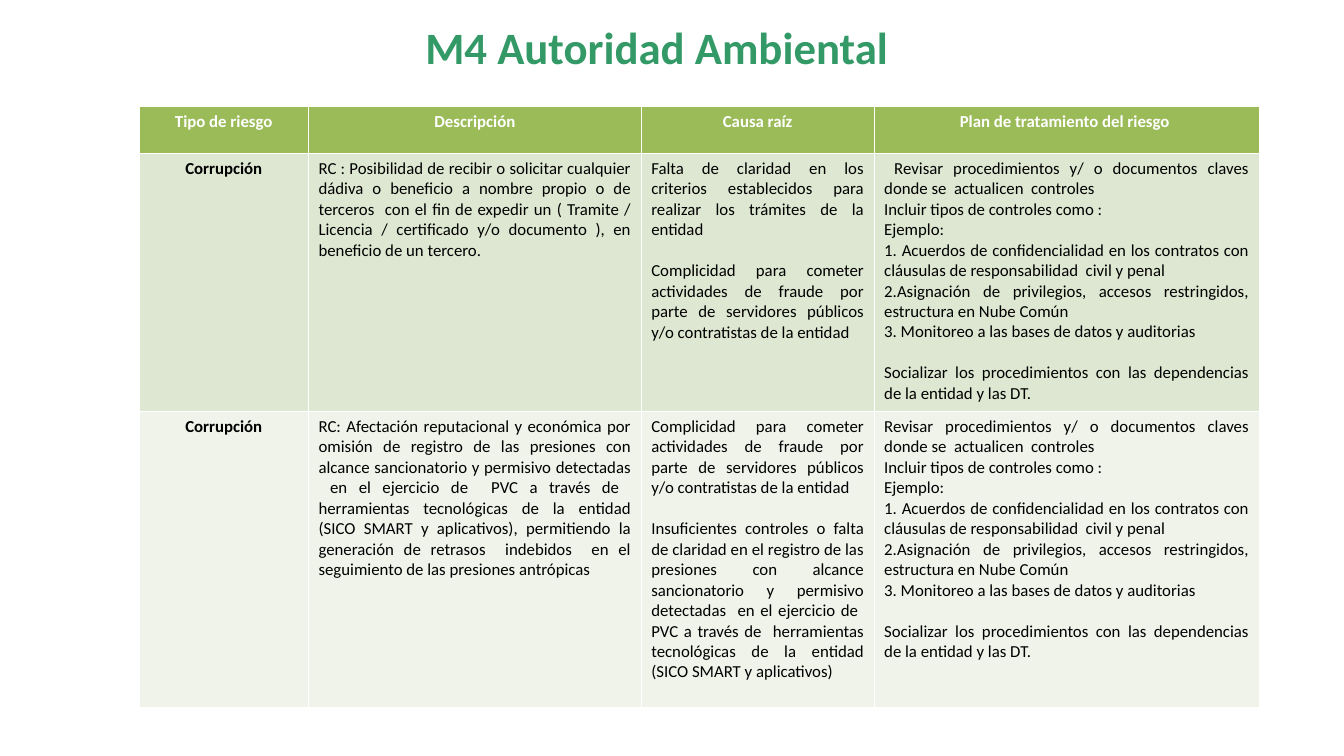
import pptx
import pptx.util
import pptx.dml.color
import pptx.enum.text
from pptx.util import Inches

COLORS = {
    "title": "339966",
    "head": "9BBB59",
    "dark": "DEE7D1",
    "light": "EFF3EA",
    "white": "FFFFFF",
    "black": "000000",
}
ALIGN = pptx.enum.text.PP_ALIGN
GAP = 14.65  # height of one 12 pt line


def rgb(name):
    return pptx.dml.color.RGBColor.from_string(COLORS[name])


def write(frame, blocks, size=12, color="black", bold=False, align=ALIGN.JUSTIFY):
    """Fill a frame with blocks of lines, one blank line's height between blocks."""
    para = None
    for block in blocks:
        for i, line in enumerate(block):
            first = para is None
            para = frame.paragraphs[0] if first else frame.add_paragraph()
            para.alignment = align
            if i == 0 and not first:
                para.space_before = pptx.util.Pt(GAP)
            run = para.add_run()
            run.text = line
            run.font.name = "Calibri"
            run.font.size = pptx.util.Pt(size)
            run.font.bold = bold
            run.font.color.rgb = rgb(color)


deck = pptx.Presentation()
deck.slide_width, deck.slide_height = Inches(13.33), Inches(7.5)
slide = deck.slides.add_slide(deck.slide_layouts[6])

# Title
title = slide.shapes.add_textbox(Inches(1.79), Inches(0.2), Inches(9.45), Inches(0.54))
frame = title.text_frame
frame.word_wrap = True
frame.margin_left = frame.margin_right = frame.margin_top = frame.margin_bottom = 0
write(frame, [["M4 Autoridad Ambiental"]], size=32, color="title", bold=True,
      align=ALIGN.CENTER)

# Risk table
fraud = ("Complicidad para cometer actividades de fraude por parte de servidores "
         "públicos y/o contratistas de la entidad ")
review = "Revisar procedimientos y/ o documentos claves donde se  actualicen  controles "
steps = [
    "Incluir tipos de controles como :  ",
    "Ejemplo: ",
    "1. Acuerdos de confidencialidad en los contratos con cláusulas de "
    "responsabilidad  civil y penal",
    "2.Asignación de privilegios, accesos restringidos, estructura en Nube Común",
    "3. Monitoreo a las bases de datos y auditorias",
]
share = ["Socializar los procedimientos con las dependencias de la entidad y las DT. "]

heads = ["Tipo de riesgo", "Descripción", "Causa raíz", "Plan de tratamiento del riesgo "]
rows = [
    [[[head]] for head in heads],
    [
        [["Corrupción"]],
        [["RC : Posibilidad de recibir o solicitar cualquier dádiva o beneficio a nombre "
          "propio o de terceros  con el fin de expedir un ( Tramite / Licencia / "
          "certificado y/o documento ), en beneficio de un tercero."]],
        [["Falta de claridad en los criterios establecidos para realizar los trámites "
          "de la entidad"], [fraud]],
        [[" " + review] + steps, share],
    ],
    [
        [["Corrupción"]],
        [["RC: Afectación reputacional y económica por omisión de registro de las "
          "presiones con alcance sancionatorio y permisivo detectadas  en el ejercicio "
          "de  PVC a través de  herramientas tecnológicas de la entidad (SICO SMART y "
          "aplicativos), permitiendo la generación de retrasos  indebidos  en el "
          "seguimiento de las presiones antrópicas"]],
        [[fraud],
         ["Insuficientes controles o falta de claridad en el registro de las presiones "
          "con alcance sancionatorio y permisivo detectadas  en el ejercicio de  PVC a "
          "través de  herramientas tecnológicas de la entidad (SICO SMART y "
          "aplicativos)"]],
        [[review] + steps, share],
    ],
]
widths = [1.68, 3.3, 2.31, 3.82]
heights = [0.46, 2.56, 2.94]
fills = ["head", "dark", "light"]

table = slide.shapes.add_table(len(rows), len(widths), Inches(1.38), Inches(1.06),
                               Inches(sum(widths)), Inches(sum(heights))).table
for col, width in zip(table.columns, widths):
    col.width = Inches(width)
for r, row in enumerate(rows):
    table.rows[r].height = Inches(heights[r])
    for c, blocks in enumerate(row):
        cell = table.cell(r, c)
        cell.fill.solid()
        cell.fill.fore_color.rgb = rgb(fills[r])
        label = r == 0 or c == 0
        write(cell.text_frame, blocks, bold=label,
              color="white" if r == 0 else "black",
              align=ALIGN.CENTER if label else ALIGN.JUSTIFY)

deck.save("out.pptx")
